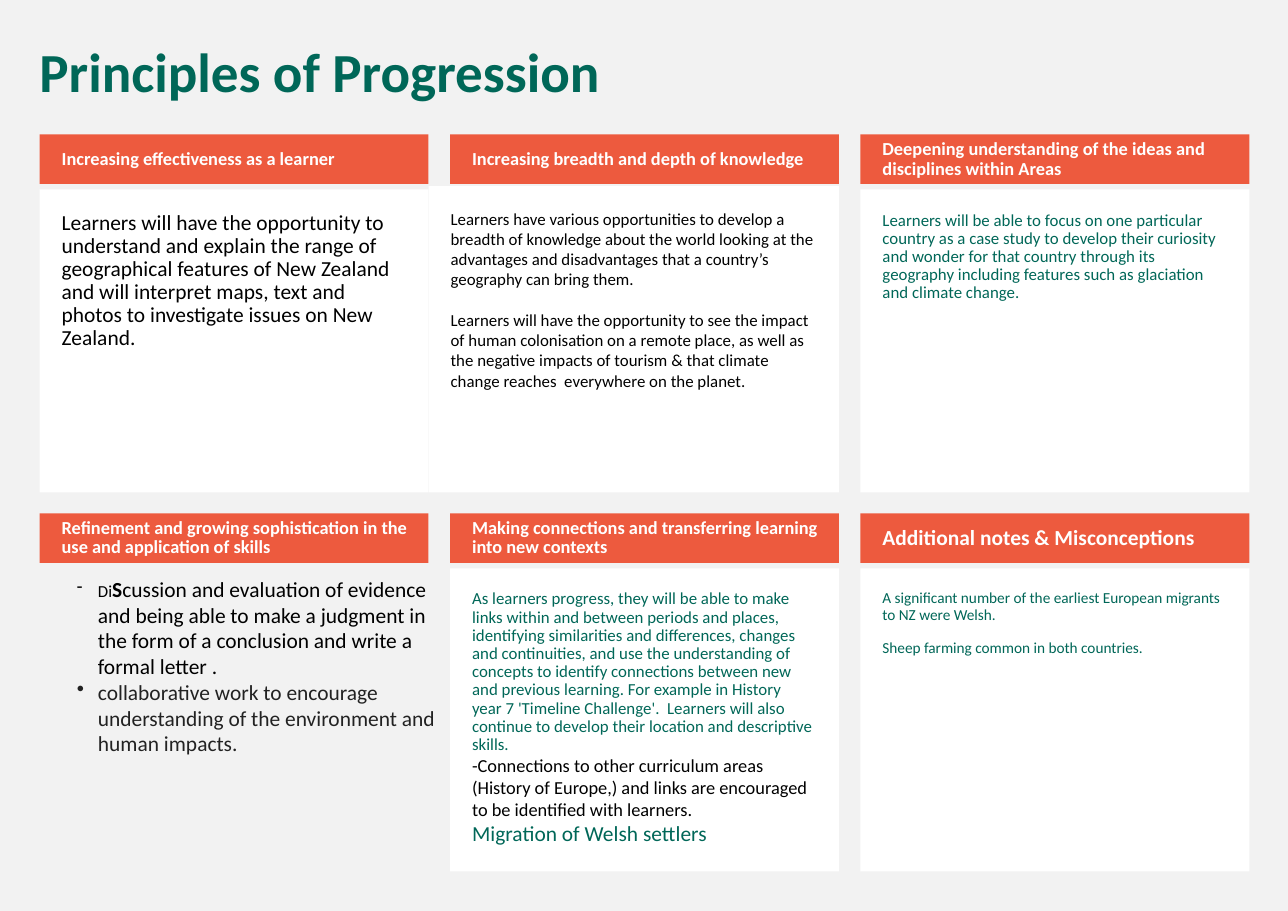
from lxml import etree
from pptx import Presentation, util as u
from pptx.dml.color import RGBColor
from pptx.enum import shapes, text
from pptx.oxml.ns import qn

COLOURS = {"ground": "F2F2F2", "panel": "FFFFFF", "banner": "ED5A3E", "white": "FFFFFF",
           "green": "006758", "black": "000000", "grey": "222222"}
FONT = "Calibri"

# Content: a paragraph is (runs, line spacing, points before); a run is (text, size, colour, bold)
TITLE = "Principles of Progression"


def para(words, size, colour, bold=False, spacing=0.9, before=11):
    return [(words, size, colour, bold)], spacing, before


# Each panel: heading, heading size, body paragraphs (None leaves the body open)
PANELS = [
    [("Increasing effectiveness as a learner", 12, [
        para("Learners will have the opportunity to understand and explain the range of "
             "geographical features of New Zealand and will interpret maps, text and photos "
             "to investigate issues on New Zealand.", 14, "black")]),
     ("Increasing breadth and depth of knowledge", 12, [
         para("Learners have various opportunities to develop a breadth of knowledge about the "
              "world looking at the advantages and disadvantages that a country’s geography can "
              "bring them.", 11, "black", spacing=1, before=0),
         para("Learners will have the opportunity to see the impact of human colonisation on a "
              "remote place, as well as the negative impacts of tourism & that climate "
              "change reaches  everywhere on the planet.", 11, "black", spacing=1, before=13.4)]),
     ("Deepening understanding of the ideas and disciplines within Areas", 12, [
         para("Learners will be able to focus on one particular country as a case study to "
              "develop their curiosity and wonder for that country through its geography "
              "including features such as glaciation and climate change.", 11, "green")])],
    [("Refinement and growing sophistication in the use and application of skills", 12, None),
     ("Making connections and transferring learning into new contexts", 12, [
         para("As learners progress, they will be able to make links within and between periods "
              "and places, identifying similarities and differences, changes and continuities, "
              "and use the understanding of concepts to identify connections between new "
              "and previous learning. For example in History  year 7 'Timeline Challenge'.  "
              "Learners will also continue to develop their location and descriptive skills.",
              11, "green"),
         para("-Connections to other curriculum areas (History of Europe,) and links are "
              "encouraged to be identified with learners.", 12, "black", spacing=1, before=0),
         para("Migration of Welsh settlers", 14, "green", spacing=1, before=0)]),
     ("Additional notes & Misconceptions", 14, [
         para("A significant number of the earliest European migrants to NZ were Welsh.",
              10, "green"),
         para("Sheep farming common in both countries.", 10, "green")])],
]
SKILLS = [
    ("-", ([("Di", 11, "black", False), ("S", 14, "black", True),
            ("cussion and evaluation of evidence and being able to make a judgment in the form "
             "of a conclusion and write a formal letter .", 14, "black", False)], 1, 0)),
    ("•", para("collaborative work to encourage understanding of the environment "
               "and human impacts.", 14, "grey", spacing=1, before=0)),
]

# Grid, in inches
SLIDE_W, SLIDE_H = 11.69, 8.27
LEFT, RIGHT, TOP = 0.36, 11.34, 1.22
PANEL_W, BANNER_H, BODY_H = 3.53, 0.45, 2.75
COL_STEP = (RIGHT - LEFT - PANEL_W) / 2
ROW_STEP, BODY_DROP = 3.44, 0.5
WIDE_PANEL = (0, 1)  # its body reaches left to the panel before it
HANG = 0.19

deck = Presentation()
deck.slide_width, deck.slide_height = u.Inches(SLIDE_W), u.Inches(SLIDE_H)
slide = deck.slides.add_slide(deck.slide_layouts[6])
slide.background.fill.solid()
slide.background.fill.fore_color.rgb = RGBColor.from_string(COLOURS["ground"])


def write(holder, paragraphs, insets=(0.1, 0.05, 0.1, 0.05), anchor=text.MSO_ANCHOR.TOP):
    frame = holder.text_frame
    frame.word_wrap = True
    frame.vertical_anchor = anchor
    (frame.margin_left, frame.margin_top,
     frame.margin_right, frame.margin_bottom) = map(u.Inches, insets)
    for i, (runs, spacing, before) in enumerate(paragraphs):
        line = frame.add_paragraph() if i else frame.paragraphs[0]
        line.alignment = text.PP_ALIGN.LEFT
        line.line_spacing, line.space_before = spacing, u.Pt(before)
        for words, size, colour, bold in runs:
            run = line.add_run()
            run.text = words
            run.font.name, run.font.size, run.font.bold = FONT, u.Pt(size), bold
            run.font.color.rgb = RGBColor.from_string(COLOURS[colour])
    return frame


def block(left, top, width, height, colour):
    rect = slide.shapes.add_shape(shapes.MSO_SHAPE.RECTANGLE,
                                  *map(u.Inches, (left, top, width, height)))
    rect.shadow.inherit = False
    rect.fill.solid()
    rect.fill.fore_color.rgb = RGBColor.from_string(COLOURS[colour])
    rect.line.fill.background()
    return rect


def text_box(left, top, width, height):
    return slide.shapes.add_textbox(*map(u.Inches, (left, top, width, height)))


# Title
write(text_box(0.26, 0.36, 11.08, 0.65), [para(TITLE, 36, "green", True)])

# Panels: a banner with a body under it
for r, row in enumerate(PANELS):
    for c, (heading, size, body) in enumerate(row):
        left, top = LEFT + c * COL_STEP, TOP + r * ROW_STEP
        if body:
            reach = COL_STEP - PANEL_W if (r, c) == WIDE_PANEL else 0
            lift = 0.03 if reach else 0
            panel = block(left - reach, top + BODY_DROP - lift,
                          PANEL_W + reach, BODY_H + lift, "panel")
            write(panel, body, (0.2,) * 4)
        banner = block(left, top, PANEL_W, BANNER_H, "banner")
        write(banner, [para(heading, size, "white", True)], (0.2, 0.05, 0.1, 0.05),
              text.MSO_ANCHOR.MIDDLE)

# Skills list on the open ground
skills = write(text_box(0.6, 5.18, 3.49, 1.82), [item for _, item in SKILLS])
for (mark, _), line in zip(SKILLS, skills.paragraphs):
    props = line._p.get_or_add_pPr()
    props.set("marL", str(u.Inches(HANG)))
    props.set("indent", str(-u.Inches(HANG)))
    etree.SubElement(props, qn("a:buChar")).set("char", mark)

deck.save("out.pptx")
